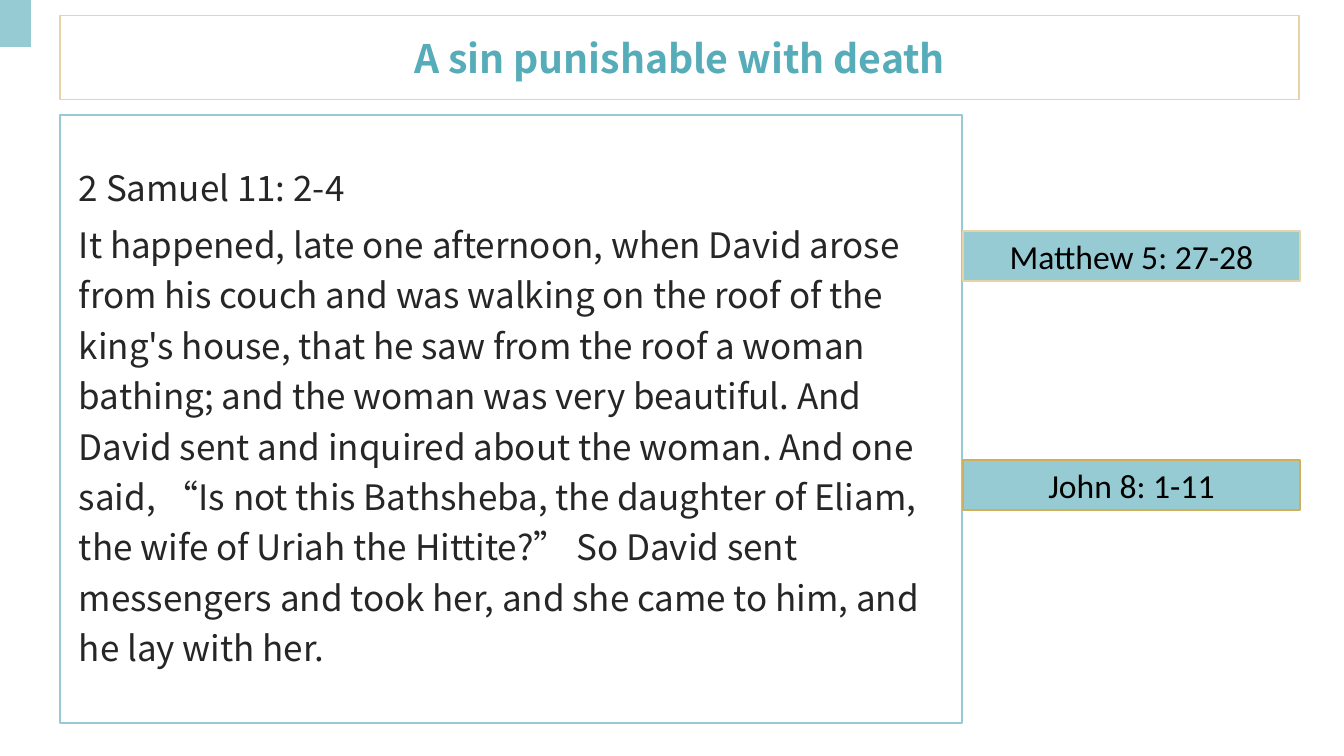
from pptx import Presentation
from pptx import util as u
from pptx.dml.color import RGBColor
from pptx.enum import shapes, text

PX = u.Inches(1) / 100.8
WHITE = RGBColor(0xFF, 0xFF, 0xFF)
BLACK = RGBColor(0x00, 0x00, 0x00)
CHARCOAL = RGBColor(0x26, 0x26, 0x26)
TEAL = RGBColor(0x56, 0xAC, 0xB8)
AQUA = RGBColor(0x96, 0xCB, 0xD3)
SAND = RGBColor(0xE7, 0xD4, 0xA6)
GOLD = RGBColor(0xD2, 0xAE, 0x58)

TITLE_FONT = {"name": "Noto Sans CJK SC", "size": u.Pt(28), "bold": True}
PASSAGE_FONT = {"name": "Noto Sans CJK SC", "size": u.Pt(25)}
REFERENCE_FONT = {"name": "Calibri", "size": u.Pt(24)}
CENTERED = {"alignment": text.PP_ALIGN.CENTER}
SPACED = {"alignment": text.PP_ALIGN.LEFT, "line_spacing": 1.2, "space_before": u.Pt(5)}

PASSAGE = [
    "2 Samuel 11: 2-4",
    "It happened, late one afternoon, when David arose from his couch and was "
    "walking on the roof of the king's house, that he saw from the roof a woman "
    "bathing; and the woman was very beautiful. And David sent and inquired about "
    "the woman. And one said, “Is not this Bathsheba, the daughter of Eliam, the "
    "wife of Uriah the Hittite?” So David sent messengers and took her, and she "
    "came to him, and he lay with her.",
]
REFERENCES = [("Matthew 5: 27-28", 0, SAND), ("John 8: 1-11", 229, GOLD)]


def emu(*lengths):
    """Turn px lengths into EMU."""
    return [u.Emu(round(length * PX)) for length in lengths]


def apply(target, values):
    """Set each attribute named in values on the target."""
    for name, value in values.items():
        setattr(target, name, value)


def paint(shape, fill, line=None):
    """Give a shape a solid fill and a thin outline, or no outline."""
    shape.fill.solid()
    shape.fill.fore_color.rgb = fill
    if line is None:
        shape.line.fill.background()
    else:
        shape.line.color.rgb = line
        shape.line.width = u.Pt(1)


def write(shape, lines, font, color, layout, anchor=text.MSO_ANCHOR.MIDDLE):
    """Fill a shape with one formatted paragraph per line."""
    frame = shape.text_frame
    apply(frame, {"word_wrap": True, "vertical_anchor": anchor,
                  "auto_size": text.MSO_AUTO_SIZE.SHAPE_TO_FIT_TEXT})
    for index, line in enumerate(lines):
        paragraph = frame.add_paragraph() if index else frame.paragraphs[0]
        apply(paragraph, layout)
        run = paragraph.add_run()
        run.text = line
        apply(run.font, font)
        run.font.color.rgb = color


def add_box(slide, box, fill, line=None):
    """Add a flat rectangle."""
    shape = slide.shapes.add_shape(shapes.MSO_SHAPE.RECTANGLE, *emu(*box))
    shape.shadow.inherit = False
    paint(shape, fill, line)
    return shape


def add_title(slide, box):
    """Place and format the title placeholder."""
    title = slide.shapes.title
    apply(title, dict(zip(("left", "top", "width", "height"), emu(*box))))
    paint(title, WHITE, SAND)
    write(title, ["A sin punishable with death"], TITLE_FONT, TEAL, CENTERED)


def add_passage(slide, box):
    """Add the framed Bible passage."""
    left, top, width, height = box
    add_box(slide, box, WHITE, AQUA)
    passage = slide.shapes.add_textbox(*emu(left + 9, top + 38, width - 36, height - 89))
    write(passage, PASSAGE, PASSAGE_FONT, CHARCOAL, SPACED, text.MSO_ANCHOR.TOP)


def add_references(slide, box):
    """Add the reference labels down the right side."""
    left, top, width, height = box
    for reference, offset, line in REFERENCES:
        label = add_box(slide, (left, top + offset, width, height), AQUA, line)
        write(label, [reference], REFERENCE_FONT, BLACK, CENTERED)


def main():
    """Build the slide and save it."""
    presentation = Presentation()
    presentation.slide_width, presentation.slide_height = emu(1344, 756)
    slide = presentation.slides.add_slide(presentation.slide_layouts[5])
    add_title(slide, (60, 29, 1239, 57))
    add_passage(slide, (60, 115, 902, 608))
    add_box(slide, (0, 0, 31, 47), AQUA)
    add_references(slide, (963, 231, 337, 50))
    presentation.save("out.pptx")


if __name__ == "__main__":
    main()
